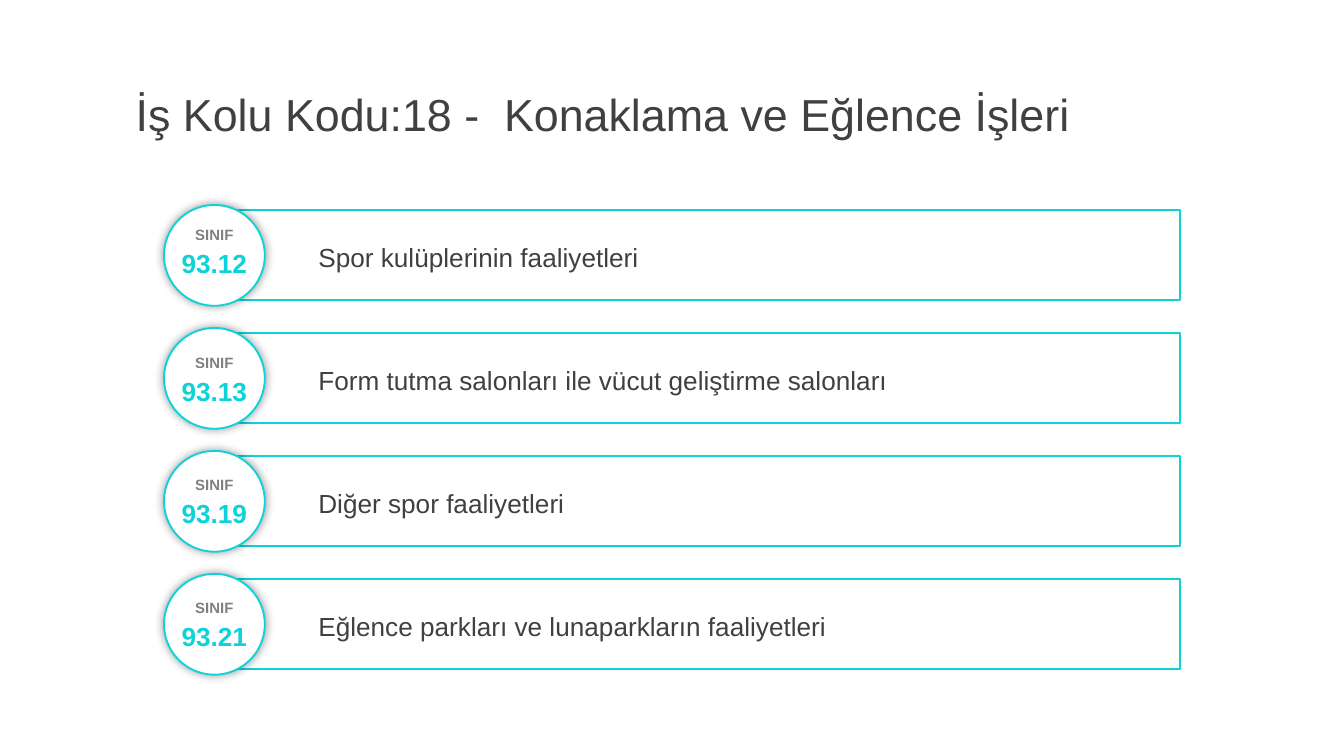
from dataclasses import dataclass

from lxml.etree import SubElement
from pptx import Presentation
from pptx.dml.color import RGBColor
from pptx.enum.shapes import MSO_SHAPE
from pptx.enum.text import MSO_ANCHOR, MSO_AUTO_SIZE, PP_ALIGN
from pptx.oxml.ns import qn
from pptx.util import Inches, Pt


@dataclass(frozen=True)
class Theme:
    font: str = "Arial"
    ink: str = "404040"
    muted: str = "808080"
    accent: str = "0DD2D9"
    paper: str = "FFFFFF"
    shadow: str = "000000"
    title_size: int = 24
    body_size: int = 14
    label_size: int = 8
    line_width: int = 1
    shadow_blur: int = 5
    shadow_alpha: int = 40


THEME = Theme()

TITLE = "İş Kolu Kodu:18 -  Konaklama ve Eğlence İşleri"
LABEL = "SINIF"

# Class code, activity, offset of the badge label within its row
ACTIVITIES = [
    ("93.12", "Spor kulüplerinin faaliyetleri", 0.10),
    ("93.13", "Form tutma salonları ile vücut geliştirme salonları", 0.14),
    ("93.19", "Diğer spor faaliyetleri", 0.13),
    ("93.21", "Eğlence parkları ve lunaparkların faaliyetleri", 0.13),
]

# Widescreen slide, in inches
SLIDE_WIDTH = 10
SLIDE_HEIGHT = SLIDE_WIDTH * 9 / 16

# Row grid, in inches: each row starts at the top of its badge
FIRST_ROW = SLIDE_HEIGHT - 4.1
ROW_PITCH = 3.66 / len(ACTIVITIES)
BADGE_LEFT, BADGE_SIZE = 1.22, 0.75
BAR_LEFT, BAR_WIDTH, BAR_HEIGHT = 1.59, 7.19, 0.67
TEXT_LEFT, TEXT_WIDTH, TEXT_HEIGHT = 2.27, 6.28, 0.34
CODE_LEFT, CODE_WIDTH, LABEL_HEIGHT = 1.14, 0.91, 0.24


def box(left, top, width, height):
    return [Inches(value) for value in (left, top, width, height)]


def write(shape, text, *, size, color=THEME.ink, bold=False, align=PP_ALIGN.LEFT):
    frame = shape.text_frame
    frame.word_wrap = True
    frame.auto_size = MSO_AUTO_SIZE.NONE
    frame.vertical_anchor = MSO_ANCHOR.MIDDLE
    paragraph = frame.paragraphs[0]
    paragraph.alignment = align
    run = paragraph.add_run()
    run.text = text
    run.font.name = THEME.font
    run.font.size = Pt(size)
    run.font.bold = bold
    run.font.color.rgb = RGBColor.from_string(color)


def add_text(slide, area, text, **style):
    write(slide.shapes.add_textbox(*area), text, **style)


def add_outline(slide, kind, area, fill=None):
    shape = slide.shapes.add_shape(kind, *area)
    shape.shadow.inherit = False
    if fill:
        shape.fill.solid()
        shape.fill.fore_color.rgb = RGBColor.from_string(fill)
    else:
        shape.fill.background()
    shape.line.color.rgb = RGBColor.from_string(THEME.accent)
    shape.line.width = Pt(THEME.line_width)
    return shape


def add_glow_shadow(shape):
    effects = shape.element.spPr.find(qn("a:effectLst"))
    shadow = SubElement(effects, qn("a:outerShdw"), blurRad=str(Pt(THEME.shadow_blur)),
                        dist="0", dir="0", algn="ctr", rotWithShape="0")
    color = SubElement(shadow, qn("a:srgbClr"), val=THEME.shadow)
    SubElement(color, qn("a:alpha"), val=str(THEME.shadow_alpha * 1000))


def add_title(slide):
    title = slide.shapes.title
    title.left, title.top, title.width, title.height = box(0.91, 0.53, 9.17, 0.63)
    write(title, TITLE, size=THEME.title_size)


def add_activity(slide, row, code, activity, label_offset):
    top = FIRST_ROW + row * ROW_PITCH

    # Bar with the activity
    bar_top = top + (BADGE_SIZE - BAR_HEIGHT) / 2
    add_outline(slide, MSO_SHAPE.RECTANGLE, box(BAR_LEFT, bar_top, BAR_WIDTH, BAR_HEIGHT))
    text_top = bar_top + (BAR_HEIGHT - TEXT_HEIGHT) / 2 + 0.01
    add_text(slide, box(TEXT_LEFT, text_top, TEXT_WIDTH, TEXT_HEIGHT), activity,
             size=THEME.body_size)

    # Round badge with the class code
    badge = add_outline(slide, MSO_SHAPE.OVAL,
                        box(BADGE_LEFT, top, BADGE_SIZE, BADGE_SIZE), fill=THEME.paper)
    add_glow_shadow(badge)
    label_top = top + label_offset
    add_text(slide, box(CODE_LEFT, label_top + 0.16, CODE_WIDTH, TEXT_HEIGHT), code,
             size=THEME.body_size, color=THEME.accent, bold=True, align=PP_ALIGN.CENTER)
    add_text(slide, box(CODE_LEFT, label_top, CODE_WIDTH, LABEL_HEIGHT), LABEL,
             size=THEME.label_size, color=THEME.muted, bold=True, align=PP_ALIGN.CENTER)


def main():
    presentation = Presentation()
    presentation.slide_width = Inches(SLIDE_WIDTH)
    presentation.slide_height = Inches(SLIDE_HEIGHT)
    title_only = presentation.slide_layouts.get_by_name("Title Only")
    slide = presentation.slides.add_slide(title_only)
    add_title(slide)
    for row, (code, activity, label_offset) in enumerate(ACTIVITIES):
        add_activity(slide, row, code, activity, label_offset)
    presentation.save("out.pptx")


if __name__ == "__main__":
    main()
